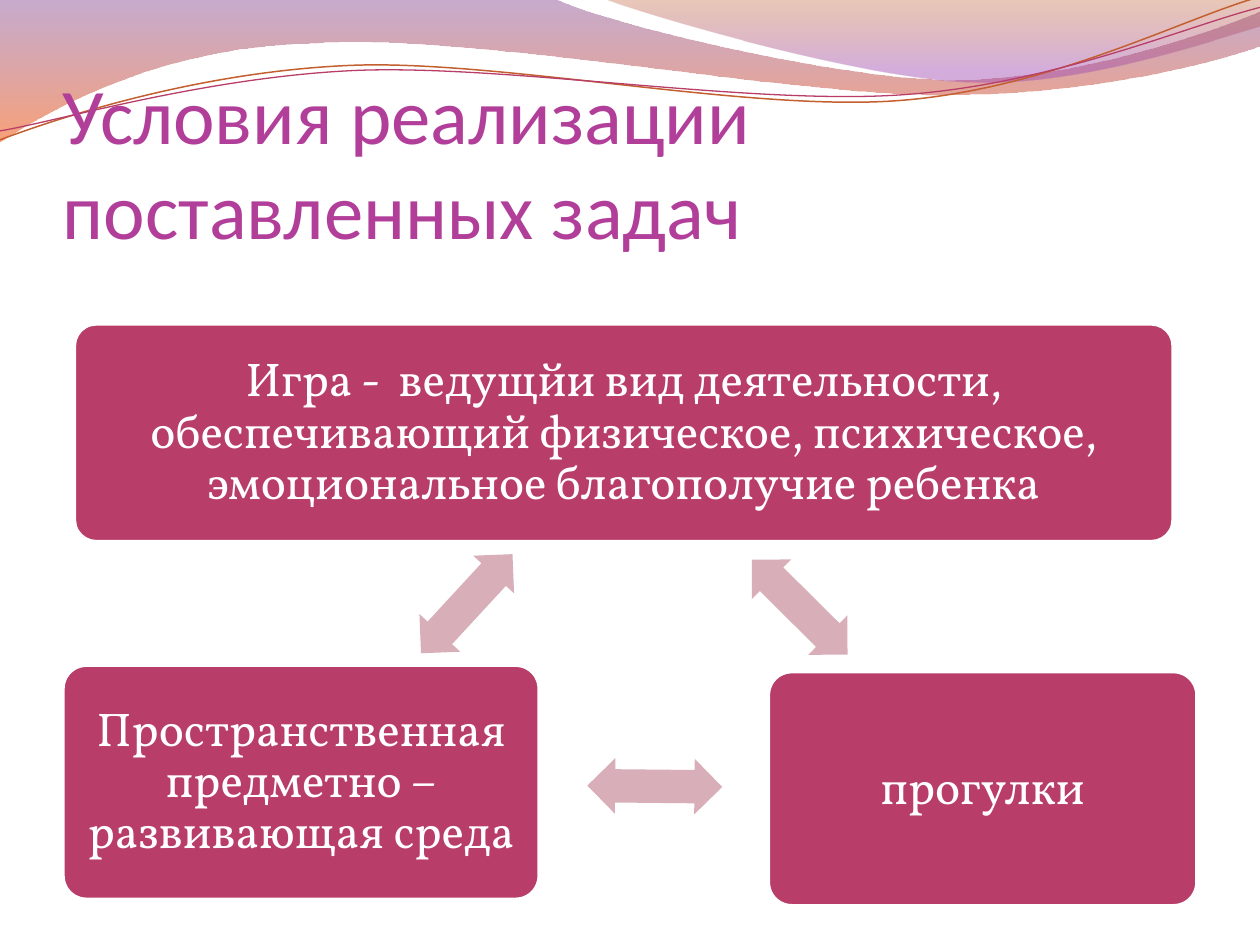
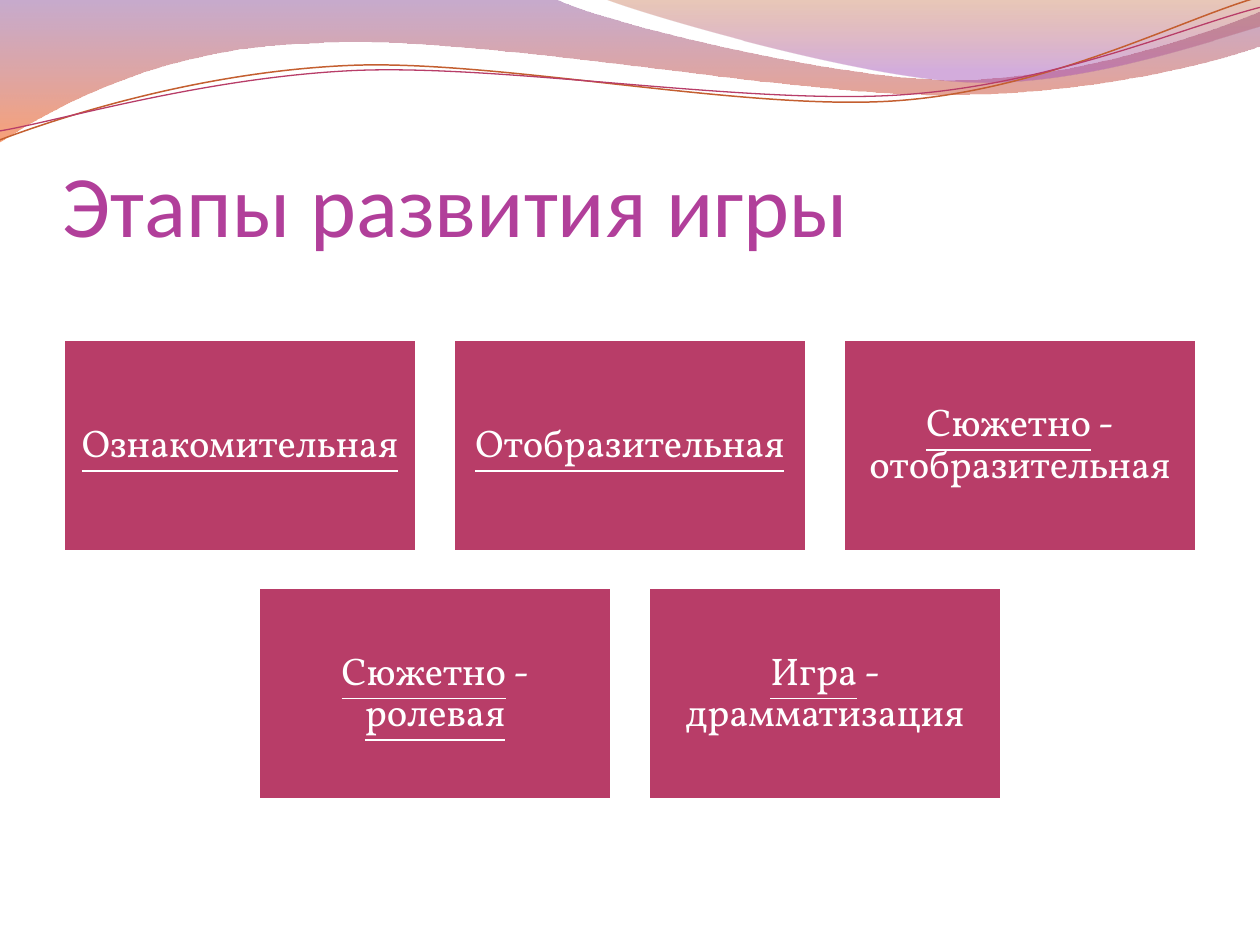
from lxml import etree
from pptx import Presentation
from pptx.dml.color import RGBColor
from pptx.enum.shapes import MSO_SHAPE
from pptx.enum.text import MSO_ANCHOR, PP_ALIGN
from pptx.oxml.ns import qn
from pptx.util import Cm, Pt

RECTANGLE = MSO_SHAPE.RECTANGLE
ROUNDED = MSO_SHAPE.ROUNDED_RECTANGLE
DOUBLE_ARROW = MSO_SHAPE.LEFT_RIGHT_ARROW
CENTER, LEFT = PP_ALIGN.CENTER, PP_ALIGN.LEFT
MIDDLE, BOTTOM = MSO_ANCHOR.MIDDLE, MSO_ANCHOR.BOTTOM

rgb = RGBColor.from_string
CRIMSON, PINK, WHITE, PURPLE = "B83D68", "D8AFB9", "FFFFFF", "B13F9A"
SLIDE_WIDTH, MARGIN = 25.4, 1.27


def add_block(slide, kind, box, color, outline=None):
    block = slide.shapes.add_shape(kind, *map(Cm, box))
    block.shadow.inherit = False
    block.fill.solid()
    block.fill.fore_color.rgb = rgb(color)
    if outline:
        block.line.color.rgb = rgb(outline)
        block.line.width = Pt(2)
    else:
        block.line.fill.background()
    return block


def write(shape, runs, size, color, face, align, spacing, anchor, insets):
    frame = shape.text_frame
    left, top, right, bottom = map(Cm, insets)
    frame_format = {
        "word_wrap": True, "vertical_anchor": anchor,
        "margin_left": left, "margin_top": top,
        "margin_right": right, "margin_bottom": bottom,
    }
    for attribute, value in frame_format.items():
        setattr(frame, attribute, value)
    paragraph = frame.paragraphs[0]
    paragraph.alignment = align
    paragraph.line_spacing = spacing
    for words, underlined in runs:
        run = paragraph.add_run()
        run.text = words
        run.font.color.rgb = rgb(color)
        font_format = {"name": face, "size": Pt(size), "underline": underlined}
        for attribute, value in font_format.items():
            setattr(run.font, attribute, value)


prs = Presentation()
prs.slide_width, prs.slide_height = Cm(SLIDE_WIDTH), Cm(19.05)
blank = prs.slide_layouts[6]
for placeholder in list(blank.placeholders):
    placeholder._element.getparent().remove(placeholder._element)

conditions = prs.slides.add_slide(blank)
stages = prs.slides.add_slide(blank)

waves = [
    {"start": (0, 0),
     "segments": [
         [(11.18, -0.03)],
         [(12.09, 0.43), (16.87, 1.6), (19.25, 1.6)],
         [(21.67, 1.6), (24.33, 0.66), (25.4, 0.23)],
         [(25.43, 0.91)],
         [(24.97, 1.12), (22.1, 1.93), (18.95, 1.91)],
         [(15.8, 1.91), (9.7, 0.71), (6.53, 0.86)],
         [(3.28, 0.91), (1.17, 2.11), (-0.03, 2.87)]],
     "stops": [(0, "834591", 45), (1, "F35307", 55)]},
    {"start": (12.17, -0.03),
     "segments": [
         [(12.93, 0.28), (17.32, 1.57), (19.53, 1.65)],
         [(21.74, 1.75), (24.41, 0.81), (25.4, 0.53)],
         [(25.4, 0)]],
     "stops": [(0, "B74915", 30), (0.8, "A14BB4", 45)]},
    {"start": (0, 2.82),
     "segments": [
         [(1.22, 2.36), (4.01, 1.45), (7.04, 1.32)],
         [(10.03, 1.19), (15.06, 2.26), (18.11, 2.03)],
         [(21.16, 1.8), (23.83, 0.38), (25.35, -0.05)]],
     "line": ("C45F30", 0.85)},
    {"start": (0, 2.64),
     "segments": [
         [(1.19, 2.44), (4.17, 1.55), (7.19, 1.42)],
         [(10.24, 1.3), (15.16, 2.13), (18.21, 1.91)],
         [(21.23, 1.7), (23.9, 0.53), (25.4, 0.15)]],
     "line": (CRIMSON, 0.75)},
]
for wave in waves:
    builder = conditions.shapes.build_freeform(*map(Cm, wave["start"]))
    builder.add_line_segments(
        [(Cm(x), Cm(y)) for segment in wave["segments"] for x, y in segment],
        close="stops" in wave)
    ribbon = builder.convert_to_shape()
    ribbon.shadow.inherit = False
    steps = iter(list(ribbon._element.iter(qn("a:lnTo"))))
    for segment in wave["segments"]:
        first, *others = [next(steps) for _ in segment]
        if others:
            curve = etree.Element(qn("a:cubicBezTo"))
            first.addprevious(curve)
            for step in (first, *others):
                curve.append(step[0])
                step.getparent().remove(step)
    if "stops" in wave:
        ribbon.line.fill.background()
        ribbon.fill.gradient()
        ribbon.fill.gradient_angle = 270
        for stop, (position, color, _) in zip(ribbon.fill.gradient_stops, wave["stops"]):
            stop.position = position
            stop.color.rgb = rgb(color)
        tints = ribbon._element.spPr.iter(qn("a:srgbClr"))
        for tint, (_, _, opacity) in zip(list(tints), wave["stops"]):
            etree.SubElement(tint, qn("a:alpha"), val=str(opacity * 1000))
    else:
        color, width = wave["line"]
        ribbon.fill.background()
        ribbon.line.color.rgb = rgb(color)
        ribbon.line.width = Pt(width)
    blank.shapes._spTree.append(ribbon._element)

titles = [
    (conditions, "Условия реализации поставленных задач", 45),
    (stages, "Этапы развития игры", 50),
]
for slide, words, size in titles:
    title = slide.shapes.add_textbox(*map(Cm, (MARGIN, 1.96, 22.86, 3.18)))
    write(title, [(words, False)], size, PURPLE, "Calibri", LEFT, 1, BOTTOM,
          (0, 0.13, 0, 0))

factors = [
    ((1.5, 6.53, 22.15, 4.39),
     "Игра -  ведущйи вид деятельности, обеспечивающий физическое, "
     "психическое, эмоциональное благополучие ребенка"),
    ((15.49, 13.54, 8.64, 4.72), "прогулки"),
    ((MARGIN, 13.41, 9.6, 4.72), "Пространственная предметно – развивающая среда"),
]
for box, words in factors:
    factor = add_block(conditions, ROUNDED, box, CRIMSON, WHITE)
    factor.adjustments[0] = 0.1
    write(factor, [(words, False)], 27, WHITE, "Vollkorn", CENTER, 0.9, MIDDLE,
          [0.28] * 4)

for left, top, angle in [(14.76, 11.68, 44.8), (11.84, 15.29, 180.6), (8.05, 11.61, 312.7)]:
    link = add_block(conditions, DOUBLE_ARROW, (left, top, 2.72, 1.12), PINK)
    link.adjustments[0], link.adjustments[1] = 0.6, 0.5
    link.rotation = angle

STAGE_WIDTH, STAGE_HEIGHT, GAP, FIRST_TOP = 7.14, 4.29, 0.72, 6.83
stage_rows = [
    [[("Ознакомительная", True)],
     [("Отобразительная", True)],
     [("Сюжетно", True), (" - отобразительная", False)]],
    [[("Сюжетно", True), (" - ", False), ("ролевая", True)],
     [("Игра", True), (" - драмматизация", False)]],
]
for row, row_stages in enumerate(stage_rows):
    row_width = len(row_stages) * (STAGE_WIDTH + GAP) - GAP
    for column, runs in enumerate(row_stages):
        left = (SLIDE_WIDTH - row_width) / 2 + column * (STAGE_WIDTH + GAP)
        top = FIRST_TOP + row * (STAGE_HEIGHT + GAP)
        stage = add_block(stages, RECTANGLE, (left, top, STAGE_WIDTH, STAGE_HEIGHT),
                          CRIMSON, WHITE)
        write(stage, runs, 22, WHITE, "Vollkorn", CENTER, 0.9, MIDDLE, [0.23] * 4)

prs.save("out.pptx")
